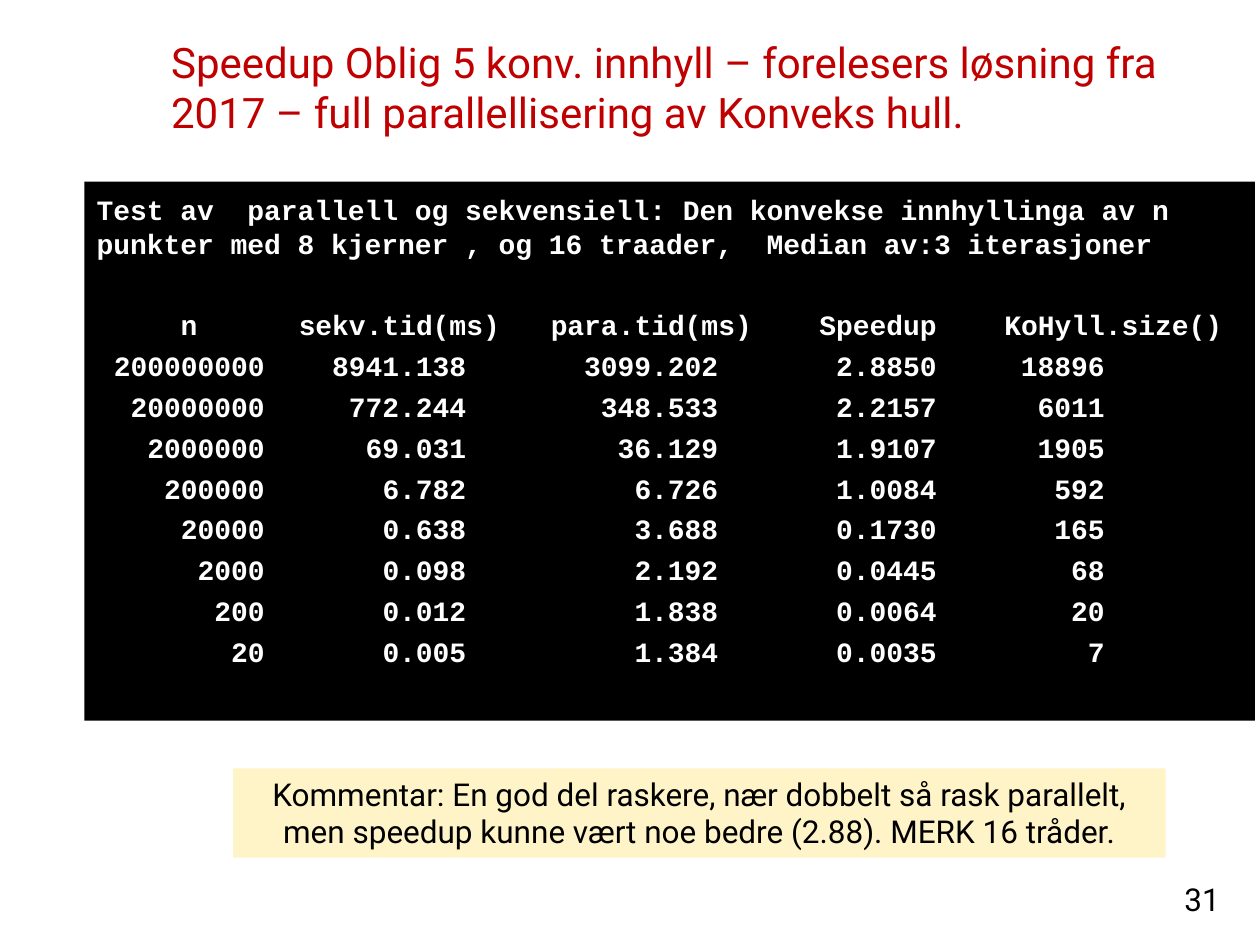
from dataclasses import dataclass

import pptx
import pptx.dml.color
import pptx.enum.shapes
import pptx.enum.text
import pptx.oxml.ns
import pptx.util
from lxml import etree

Cm = pptx.util.Cm
Pt = pptx.util.Pt
Align = pptx.enum.text.PP_ALIGN
Anchor = pptx.enum.text.MSO_ANCHOR


@dataclass(frozen=True)
class Theme:
    sans: str = "Roboto"
    mono: str = "Courier New"
    red: str = "C00000"
    black: str = "000000"
    white: str = "FFFFFF"
    cream: str = "FFF4C8"
    title_size: int = 24
    body_size: int = 18
    console_size: int = 16


THEME = Theme()

INTRO = ("Test av  parallell og sekvensiell: Den konvekse innhyllinga av n "
         "punkter med 8 kjerner , og 16 traader,  Median av:3 iterasjoner")
HEADER = ("n", "sekv.tid(ms)", "para.tid(ms)", "Speedup", "KoHyll.size()")
RESULTS = (
    ("200000000", "8941.138", "3099.202", "2.8850", "18896"),
    ("20000000", "772.244", "348.533", "2.2157", "6011"),
    ("2000000", "69.031", "36.129", "1.9107", "1905"),
    ("200000", "6.782", "6.726", "1.0084", "592"),
    ("20000", "0.638", "3.688", "0.1730", "165"),
    ("2000", "0.098", "2.192", "0.0445", "68"),
    ("200", "0.012", "1.838", "0.0064", "20"),
    ("20", "0.005", "1.384", "0.0035", "7"),
)
# Right edges of the columns, counted in characters
HEADER_ENDS = (6, 24, 39, 50, 67)
RESULT_ENDS = (10, 22, 37, 50, 60)


def color(value):
    return pptx.dml.color.RGBColor.from_string(value)


def format_paragraph(paragraph, font_name, size, font_color, bold=False):
    for run in paragraph.runs:
        run.font.name = font_name
        run.font.size = Pt(size)
        run.font.color.rgb = color(font_color)
        run.font.bold = bold


def add_text(slide, box, text, size, font_color, align=Align.LEFT, anchor=Anchor.BOTTOM):
    frame = slide.shapes.add_textbox(*box).text_frame
    frame.word_wrap = True
    frame.vertical_anchor = anchor
    frame.text = text
    paragraph = frame.paragraphs[0]
    paragraph.alignment = align
    format_paragraph(paragraph, THEME.sans, size, font_color)


def add_panel(slide, box, fill_color):
    """Add a plain filled rectangle and return its text frame."""
    shape = slide.shapes.add_shape(pptx.enum.shapes.MSO_SHAPE.RECTANGLE, *box)
    shape.shadow.inherit = False
    shape.fill.solid()
    shape.fill.fore_color.rgb = color(fill_color)
    shape.line.fill.background()
    shape.text_frame.word_wrap = True
    return shape.text_frame


def set_right_tabs(paragraph, character_ends):
    qn = pptx.oxml.ns.qn
    properties = paragraph._p.get_or_add_pPr()
    tab_list = etree.SubElement(properties, qn("a:tabLst"))
    for end in character_ends:
        position = Pt(end * THEME.console_size * 0.6)
        etree.SubElement(tab_list, qn("a:tab"), pos=str(position), algn="r")


def add_console(slide, box):
    """Add the printed timings, with each column right-aligned on a tab stop."""
    frame = add_panel(slide, box, THEME.black)
    frame.vertical_anchor = Anchor.TOP
    frame.margin_top = Cm(0.23)
    frame.text = INTRO
    rows = [(HEADER, HEADER_ENDS, 27)]
    rows += [(result, RESULT_ENDS, 4.2) for result in RESULTS]
    for cells, ends, space_before in rows:
        paragraph = frame.add_paragraph()
        paragraph.text = "".join("\t" + cell for cell in cells)
        paragraph.space_before = Pt(space_before)
        set_right_tabs(paragraph, ends)
    for paragraph in frame.paragraphs:
        paragraph.alignment = Align.LEFT
        format_paragraph(paragraph, THEME.mono, THEME.console_size, THEME.white, bold=True)


def add_comment(slide, box, text):
    frame = add_panel(slide, box, THEME.cream)
    frame.vertical_anchor = Anchor.TOP
    frame.text = text
    paragraph = frame.paragraphs[0]
    paragraph.alignment = Align.CENTER
    format_paragraph(paragraph, THEME.sans, THEME.body_size, THEME.black)


def main():
    presentation = pptx.Presentation()
    presentation.slide_width = Cm(25.4)
    presentation.slide_height = Cm(19.05)
    slide = presentation.slides.add_slide(presentation.slide_layouts[6])
    add_text(slide, (Cm(3.2), Cm(0.58), Cm(21.64), Cm(2.31)),
             "Speedup Oblig 5 konv. innhyll – forelesers løsning fra 2017 – "
             "full parallellisering av Konveks hull.",
             THEME.title_size, THEME.red)
    add_console(slide, (Cm(1.7), Cm(3.66), Cm(23.6), Cm(10.87)))
    add_text(slide, (Cm(19.56), Cm(17.35), Cm(5.28), Cm(1.27)), "31",
             THEME.body_size, THEME.black, align=Align.RIGHT)
    add_comment(slide, (Cm(4.7), Cm(15.49), Cm(18.8), Cm(1.8)),
                "Kommentar: En god del raskere, nær dobbelt så rask parallelt, "
                "men speedup kunne vært noe bedre (2.88). MERK 16 tråder.")
    presentation.save("out.pptx")


if __name__ == "__main__":
    main()
